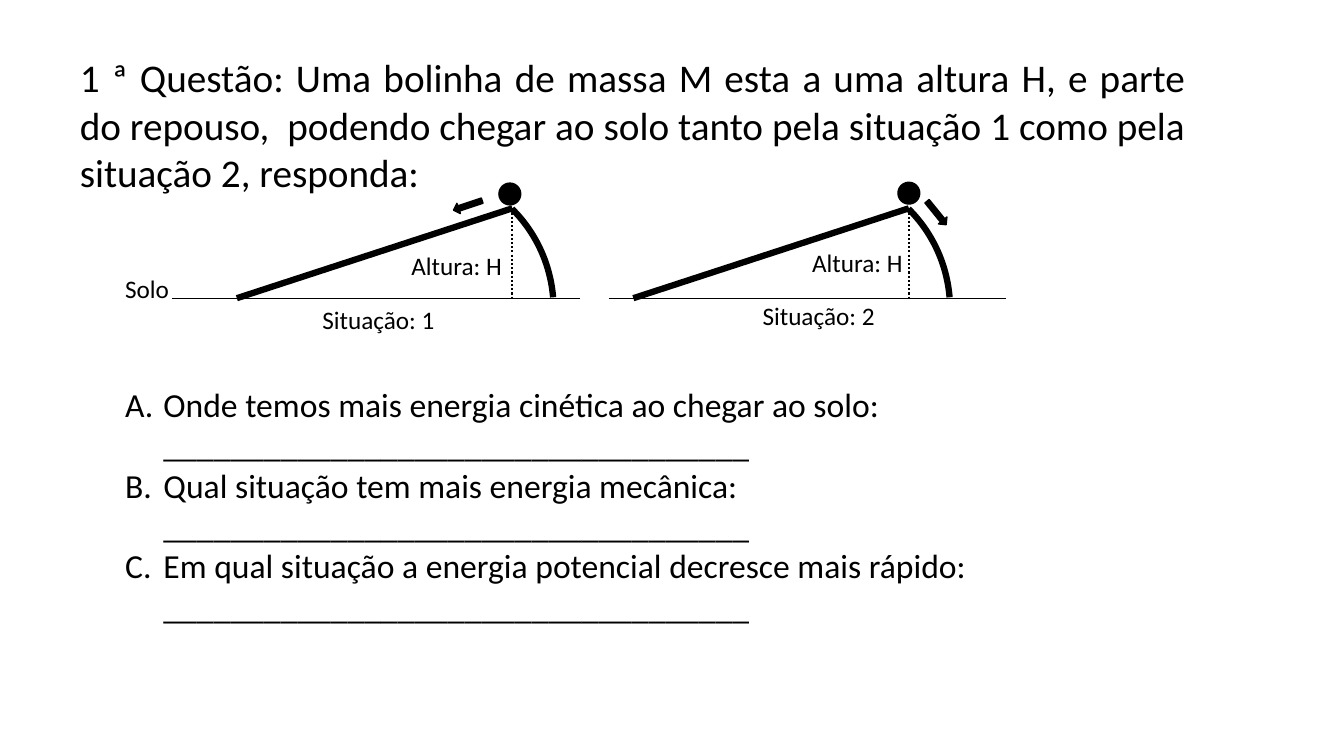
from lxml.etree import SubElement
from pptx import Presentation
from pptx.dml.color import RGBColor
from pptx.enum.dml import MSO_LINE
from pptx.enum.shapes import MSO_CONNECTOR, MSO_SHAPE
from pptx.enum.text import MSO_ANCHOR, MSO_AUTO_SIZE, PP_ALIGN
from pptx.oxml.ns import qn
from pptx.util import Inches, Pt

COLORS = {"ink": "000000", "paper": "FFFFFF"}
FONT = "Calibri"
COLS, ROWS = 160, 90
BLANK = "_" * 35
TITLE = ("1 ª Questão: Uma bolinha de massa M esta a uma altura H, e parte do repouso,  "
         "podendo chegar ao solo tanto pela situação 1 como pela situação 2, responda:")
ASKS = ["Onde temos mais energia cinética ao chegar ao solo:",
        "Qual situação tem mais energia mecânica:",
        "Em qual situação a energia potencial decresce mais rápido:"]

# Grid rows shared by both ramps
PEAK, GROUND = 24.8, 35.5
SCENES = [
    dict(name="Situação: 1", apex=61, floor=(20.5, 69), foot=28.2, ball=(59.4, 21.8),
         arrow=(53.9, 23.8), turn=341.5, height=(47.8, 29.2), label=(37.2, 35.6)),
    dict(name="Situação: 2", apex=108.2, floor=(72.5, 119.8), foot=75.4, ball=(106.9, 21.7),
         arrow=(109.7, 24.7), turn=230.9, height=(95.5, 28.9), label=(89.6, 35.2)),
]


class Board:
    def __init__(self, deck):
        self.slide = deck.slides.add_slide(deck.slide_layouts[1])
        self.col = deck.slide_width / COLS
        self.row = deck.slide_height / ROWS
        self.slide.background.fill.solid()
        self.slide.background.fill.fore_color.rgb = self.color("paper")

    def color(self, name):
        return RGBColor.from_string(COLORS[name])

    def box(self, x, y, w, h):
        """Turn grid columns and rows into slide lengths."""
        return (round(x * self.col), round(y * self.row),
                round(w * self.col), round(h * self.row))

    def text(self, shape, lines, size, align=PP_ALIGN.LEFT):
        """Fill a shape with styled lines and return its paragraphs."""
        frame = shape.text_frame
        frame.word_wrap = True
        frame.auto_size = MSO_AUTO_SIZE.NONE
        frame.vertical_anchor = MSO_ANCHOR.TOP
        frame.text = "\n".join(lines)
        for para in frame.paragraphs:
            para.alignment = align
            para.space_before = Pt(0)
            para.font.name = FONT
            para.font.size = Pt(size)
            para.font.color.rgb = self.color("ink")
        return frame.paragraphs

    def holder(self, index, area, lines, size, align=PP_ALIGN.LEFT):
        """Move and fill one of the layout's placeholders."""
        shape = self.slide.placeholders[index]
        shape.left, shape.top, shape.width, shape.height = self.box(*area)
        return self.text(shape, lines, size, align)

    def title(self, area, text):
        self.holder(0, area, [text], 28, PP_ALIGN.JUSTIFY)

    def list(self, area, lines):
        indent = Inches(0.38)
        for para in self.holder(1, area, lines, 24):
            props = para._p.get_or_add_pPr()
            props.set("marL", str(indent))
            props.set("indent", str(-indent))
            SubElement(props, qn("a:buFont"), typeface=FONT)
            SubElement(props, qn("a:buAutoNum"), type="alphaUcPeriod")

    def label(self, x, y, w, text):
        shape = self.slide.shapes.add_textbox(*self.box(x, y, w, 4.8))
        self.text(shape, [text], 18)

    def line(self, x1, y1, x2, y2, width, dash=None):
        ends = self.box(x1, y1, x2, y2)
        link = self.slide.shapes.add_connector(MSO_CONNECTOR.STRAIGHT, *ends)
        link.line.color.rgb = self.color("ink")
        link.line.width = Pt(width)
        if dash:
            link.line.dash_style = dash
        SubElement(link._element.spPr, qn("a:effectLst"))

    def shape(self, kind, area, turn=0, width=1, filled=True):
        item = self.slide.shapes.add_shape(kind, *self.box(*area))
        item.shadow.inherit = False
        item.rotation = turn
        item.line.color.rgb = self.color("ink")
        item.line.width = Pt(width)
        if filled:
            item.fill.solid()
            item.fill.fore_color.rgb = self.color("ink")
        else:
            item.fill.background()
        return item

    def scene(self, name, apex, floor, foot, ball, arrow, turn, height, label):
        """Draw a ramp with its curved side, ball, arrow and labels."""
        curve = self.shape(MSO_SHAPE.ARC, (apex - 26.2, 20.4, 31.1, 32.5), 354.1, 4.5, False)
        curve.adjustments[0], curve.adjustments[1] = 190.725, 0.764
        self.line(floor[0], GROUND, floor[1], GROUND, 0.75)
        self.line(foot, GROUND, apex, PEAK, 4.5)
        self.line(apex, PEAK, apex, GROUND, 1.5, MSO_LINE.ROUND_DOT)
        self.shape(MSO_SHAPE.OVAL, (*ball, 2.6, 2.6))
        self.shape(MSO_SHAPE.LEFT_ARROW, (*arrow, 3.6, 1.3), turn)
        self.label(*height, 14.3, "Altura: H")
        self.label(*label, 17.2, name)


def main():
    deck = Presentation()
    deck.slide_width, deck.slide_height = Inches(13.33), Inches(7.5)
    board = Board(deck)
    board.title((8.3, 5.8, 134, 18.1), TITLE)
    board.list((13.7, 45.1, 132.6, 30.2), [f"{ask} {BLANK}" for ask in ASKS])
    for scene in SCENES:
        board.scene(**scene)
    board.label(13.7, 32, 9, "Solo")
    deck.save("out.pptx")


if __name__ == "__main__":
    main()
